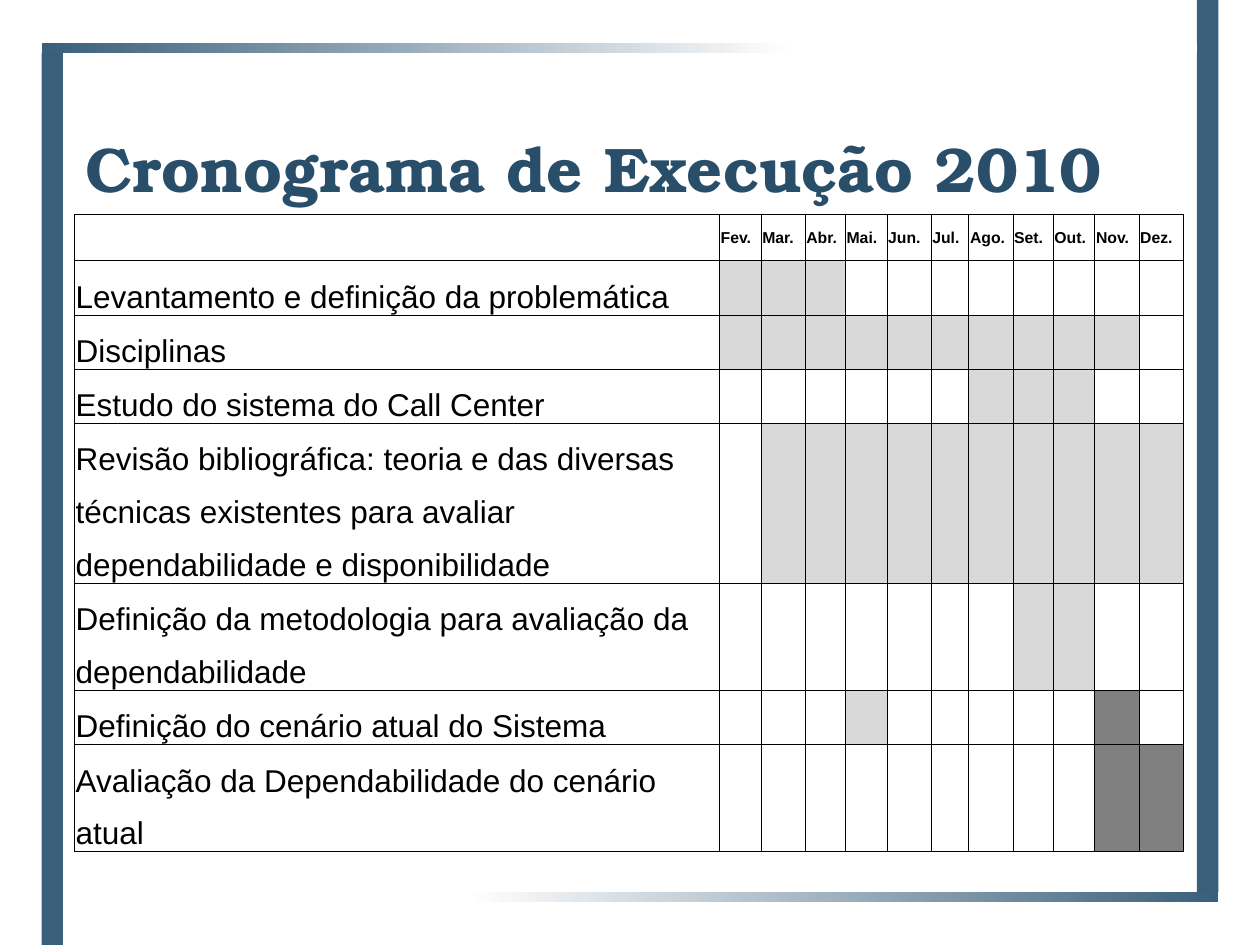
"""Build the 2010 execution schedule slide: a framed title above a month-by-month table."""
from lxml import etree
from pptx import Presentation, util as u
from pptx.dml.color import RGBColor
from pptx.enum import shapes, text
from pptx.oxml import ns

COLORS = {"frame": "3A5F7B", "title": "284E6A", "text": "000000", "line": "000000",
          "none": "FFFFFF", "done": "D9D9D9", "planned": "808080"}
TITLE = "Cronograma de Execução 2010"
MONTHS = ["Fev.", "Mar.", "Abr.", "Mai.", "Jun.", "Jul.", "Ago.", "Set.", "Out.", "Nov.", "Dez."]
STATES = {".": "none", "x": "done", "#": "planned"}
TASKS = [
    ("Levantamento e definição da problemática", "xxx........", 1),
    ("Disciplinas", "xxxxxxxxxx.", 1),
    ("Estudo do sistema do Call Center", "......xxx..", 1),
    ("Revisão bibliográfica: teoria e das diversas técnicas existentes "
     "para avaliar dependabilidade e disponibilidade", ".xxxxxxxxxx", 3),
    ("Definição da metodologia para avaliação da dependabilidade", ".......xx..", 2),
    ("Definição do cenário atual do Sistema", "...x.....#.", 1),
    ("Avaliação da Dependabilidade do cenário atual", ".........##", 2),
]
COLS = [5.12, 0.33, 0.35, 0.32, 0.33, 0.35, 0.3, 0.35, 0.32, 0.33, 0.35, 0.35]
HEADER_H, LINE_H, ROW_PAD = 0.37, 0.42, 0.01
WIDTH, HEIGHT = 10, 7.5
EDGE, POST_W, RAIL_H = 0.33, 0.17, 0.08
POST_H, RAIL_W = 7.08, 9.17


def rgb(name):
    return RGBColor.from_string(COLORS[name])


def inches(*values):
    return [u.Inches(v) for v in values]


def add_bar(s, box, angle=None):
    sp = s.shapes.add_shape(shapes.MSO_SHAPE.RECTANGLE, *inches(*box))
    sp.shadow.inherit = False
    sp.line.fill.background()
    if angle is None:
        sp.fill.solid()
        sp.fill.fore_color.rgb = rgb("frame")
        return
    sp.fill.gradient()
    sp.fill.gradient_angle = angle
    for stop, name, position in zip(sp.fill.gradient_stops, ("frame", "none"), (0, 0.65)):
        stop.color.rgb = rgb(name)
        stop.position = position


def add_frame(s):
    add_bar(s, (WIDTH - EDGE - POST_W, 0, POST_W, POST_H))
    add_bar(s, (EDGE, HEIGHT - POST_H, POST_W, POST_H))
    add_bar(s, (WIDTH - EDGE - RAIL_W, POST_H, RAIL_W, RAIL_H), 180)
    add_bar(s, (EDGE, HEIGHT - POST_H - RAIL_H, RAIL_W, RAIL_H), 0)


def style_font(font, size, name, color, bold):
    font.size, font.name, font.bold = u.Pt(size), name, bold
    font.color.rgb = rgb(color)


def add_title(s):
    sp = s.shapes.title
    sp.left, sp.top, sp.width, sp.height = inches(0.58, 0.5, 8.83, 1.18)
    tf = sp.text_frame
    tf.text = TITLE
    tf.vertical_anchor = text.MSO_ANCHOR.BOTTOM
    p = tf.paragraphs[0]
    p.alignment = text.PP_ALIGN.LEFT
    style_font(p.runs[0].font, 36, "TeX Gyre Bonum", "title", True)


def format_cell(cell, fill):
    cell.margin_left = cell.margin_right = cell.margin_top = u.Inches(0.01)
    cell.margin_bottom = 0
    cell.vertical_anchor = text.MSO_ANCHOR.MIDDLE
    tc_pr = cell._tc.get_or_add_tcPr()
    for side in ("lnL", "lnR", "lnT", "lnB"):
        ln = etree.SubElement(tc_pr, ns.qn(f"a:{side}"), w=str(u.Pt(0.5)))
        solid = etree.SubElement(ln, ns.qn("a:solidFill"))
        etree.SubElement(solid, ns.qn("a:srgbClr"), val=COLORS["line"])
    cell.fill.solid()
    cell.fill.fore_color.rgb = rgb(fill)


def write_cell(cell, words, size, bold, spacing=None):
    cell.text_frame.text = words
    p = cell.text_frame.paragraphs[0]
    p.line_spacing = spacing
    style_font(p.runs[0].font, size, "Arial", "text", bold)


def add_schedule(s):
    heights = [HEADER_H] + [LINE_H * lines + ROW_PAD for _, _, lines in TASKS]
    frame = s.shapes.add_table(len(heights), len(COLS),
                               *inches(0.59, 1.7, sum(COLS), sum(heights)))
    table = frame.table
    table.first_row = table.horz_banding = False
    for col, width in zip(table.columns, COLS):
        col.width = u.Inches(width)
    for row, height in zip(table.rows, heights):
        row.height = u.Inches(height)
    for i, marks in enumerate(["." * len(MONTHS)] + [marks for _, marks, _ in TASKS]):
        for j, mark in enumerate("." + marks):
            format_cell(table.cell(i, j), STATES[mark])
    for j, month in enumerate(MONTHS, 1):
        write_cell(table.cell(0, j), month, 9, True)
    for i, (task, _, _) in enumerate(TASKS, 1):
        write_cell(table.cell(i, 0), task, 18, False, 1.5)


def main():
    prs = Presentation()
    prs.slide_width, prs.slide_height = inches(WIDTH, HEIGHT)
    s = prs.slides.add_slide(prs.slide_layouts[5])
    add_frame(s)
    add_title(s)
    add_schedule(s)
    prs.save("out.pptx")


if __name__ == "__main__":
    main()
